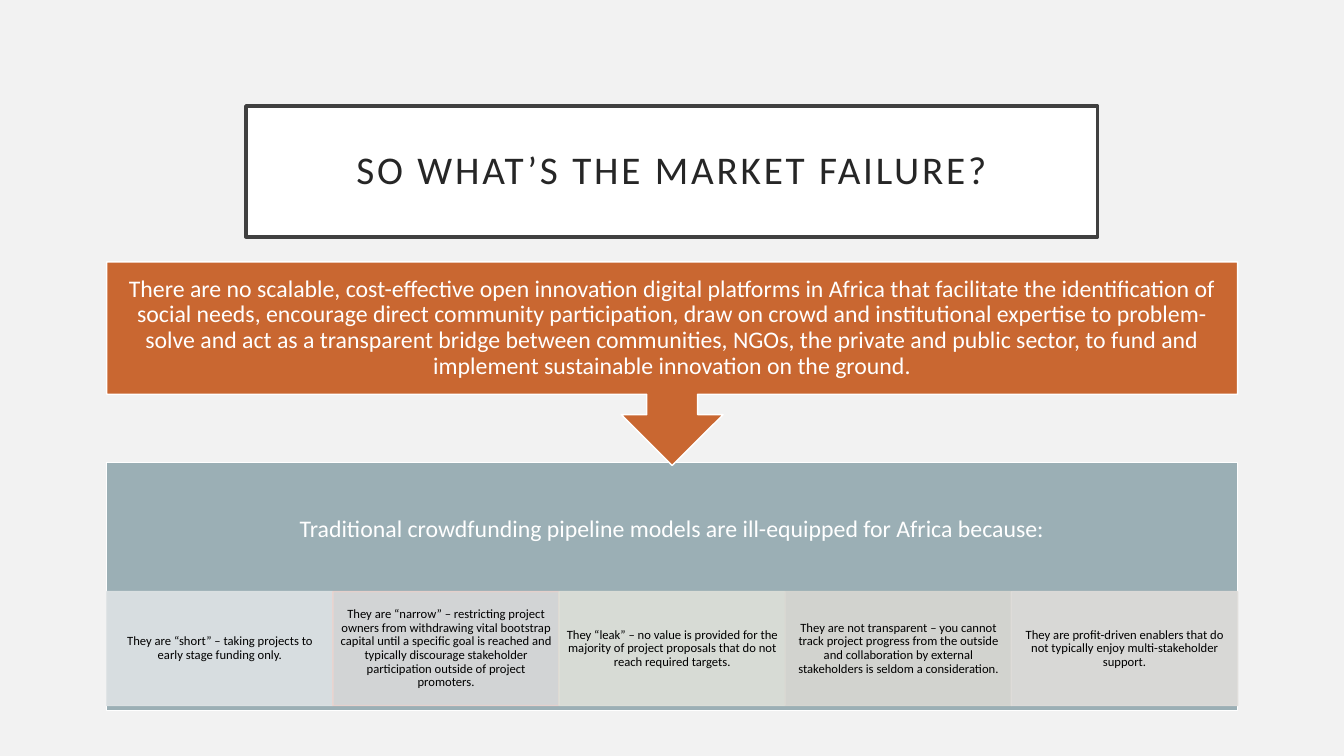
from dataclasses import dataclass

from lxml import etree
from pptx import Presentation
from pptx import util as u
from pptx.dml.color import RGBColor
from pptx.enum import shapes, text
from pptx.oxml.ns import qn


@dataclass(frozen=True)
class Theme:
    font: str = "Calibri"
    background: str = "F2F2F2"
    title_fill: str = "FFFFFF"
    title_line: str = "404040"
    title_text: str = "262626"
    claim: str = "C96731"
    panel: str = "9BAFB5"
    light: str = "FFFFFF"
    dark: str = "000000"
    title_size: float = 28
    body_size: float = 17
    reason_size: float = 9
    thick: float = 2.5
    thin: float = 1
    reason_opacity: int = 90


@dataclass(frozen=True)
class Area:
    """A rectangle in centimetres."""
    left: float
    top: float
    width: float
    height: float

    def lengths(self) -> tuple:
        return tuple(u.Cm(side) for side in (self.left, self.top, self.width, self.height))


@dataclass(frozen=True)
class Reason:
    words: str
    fill: str
    line: str


THEME = Theme()
LEFT, WIDTH = 2.69, 28.5
TITLE = Area(6.2, 2.67, 21.46, 3.3)
CLAIM = Area(LEFT, 6.6, WIDTH, 5.13)
CLAIM_TEXT = Area(LEFT, 6.6, WIDTH, 3.33)
PANEL = Area(LEFT, 11.66, WIDTH, 6.25)
PANEL_TEXT = Area(LEFT, 11.66, WIDTH, 3.38)
REASON_TOP, REASON_HEIGHT = 14.91, 2.87

TITLE_WORDS = "SO WHAT’S THE MARKET FAILURE?"
CLAIM_WORDS = (
    "There are no scalable, cost-effective open innovation digital platforms in Africa that "
    "facilitate the identification of social needs, encourage direct community participation, "
    "draw on crowd and institutional expertise to problem-solve and act as a transparent bridge "
    "between communities, NGOs, the private and public sector, to fund and implement sustainable "
    "innovation on the ground."
)
PANEL_WORDS = "Traditional crowdfunding pipeline models are ill-equipped for Africa because:"
REASONS = [
    Reason("They are “short” – taking projects to early stage funding only.", "DEE3E5", "DEE3E5"),
    Reason("They are “narrow” – restricting project owners from withdrawing vital bootstrap "
           "capital until a specific goal is reached and typically discourage stakeholder "
           "participation outside of project promoters.", "D9D9D9", "EBD3CE"),
    Reason("They “leak” – no value is provided for the majority of project proposals that do "
           "not reach required targets.", "DEE0D9", "DEE0D9"),
    Reason("They are not transparent – you cannot track project progress from the outside and "
           "collaboration by external stakeholders is seldom a consideration.",
           "D9D7D2", "D9D7D2"),
    Reason("They are profit-driven enablers that do not typically enjoy multi-stakeholder "
           "support.", "DFDDDA", "DFDDDA"),
]


def paint(fill, colour: str, opacity: int) -> None:
    fill.solid()
    fill.fore_color.rgb = RGBColor.from_string(colour)
    if opacity < 100:
        for node in fill._xPr.find(qn("a:solidFill")):
            etree.SubElement(node, qn("a:alpha"), val=str(opacity * 1000))


def add_block(page, area: Area, fill: str, line: str, weight: float = THEME.thin,
              opacity: int = 100, kind=shapes.MSO_SHAPE.RECTANGLE):
    block = page.shapes.add_shape(kind, *area.lengths())
    block.shadow.inherit = False
    paint(block.fill, fill, opacity)
    paint(block.line.fill, line, opacity)
    block.line.width = u.Pt(weight)
    return block


def write(box, words: str, size: float, colour: str, inset_x: float, inset_y: float,
          tracking: float = 0) -> None:
    """Fill a shape with one centred paragraph; insets in cm, tracking in points."""
    frame = box.text_frame
    frame.word_wrap = True
    frame.vertical_anchor = text.MSO_ANCHOR.MIDDLE
    frame.margin_left = frame.margin_right = u.Cm(inset_x)
    frame.margin_top = frame.margin_bottom = u.Cm(inset_y)
    para = frame.paragraphs[0]
    para.alignment = text.PP_ALIGN.CENTER
    para.line_spacing = 0.9
    span = para.add_run()
    span.text = words
    span.font.name = THEME.font
    span.font.size = u.Pt(size)
    span.font.color.rgb = RGBColor.from_string(colour)
    if tracking:
        span.font._element.set("spc", str(round(tracking * 100)))


def add_statement(page, area: Area, words: str) -> None:
    box = page.shapes.add_textbox(*area.lengths())
    write(box, words, THEME.body_size, THEME.light, 0.33, 0.33)


def add_reasons(page) -> None:
    width = WIDTH / len(REASONS)
    for column, reason in enumerate(REASONS):
        area = Area(LEFT + column * width, REASON_TOP, width, REASON_HEIGHT)
        cell = add_block(page, area, reason.fill, reason.line, opacity=THEME.reason_opacity)
        write(cell, reason.words, THEME.reason_size, THEME.dark, 0.18, 0.03)


def main() -> None:
    deck = Presentation()
    deck.slide_width, deck.slide_height = u.Cm(33.87), u.Cm(19.05)
    page = deck.slides.add_slide(deck.slide_layouts[6])
    paint(page.background.fill, THEME.background, 100)

    title = add_block(page, TITLE, THEME.title_fill, THEME.title_line, THEME.thick)
    write(title, TITLE_WORDS, THEME.title_size, THEME.title_text, 0.5, 0.5, tracking=2)

    add_block(page, PANEL, THEME.panel, THEME.light)
    add_statement(page, PANEL_TEXT, PANEL_WORDS)
    add_reasons(page)

    claim = add_block(page, CLAIM, THEME.claim, THEME.light,
                      kind=shapes.MSO_SHAPE.UP_ARROW_CALLOUT)
    claim.rotation = 180
    add_statement(page, CLAIM_TEXT, CLAIM_WORDS)

    deck.save("out.pptx")


if __name__ == "__main__":
    main()
